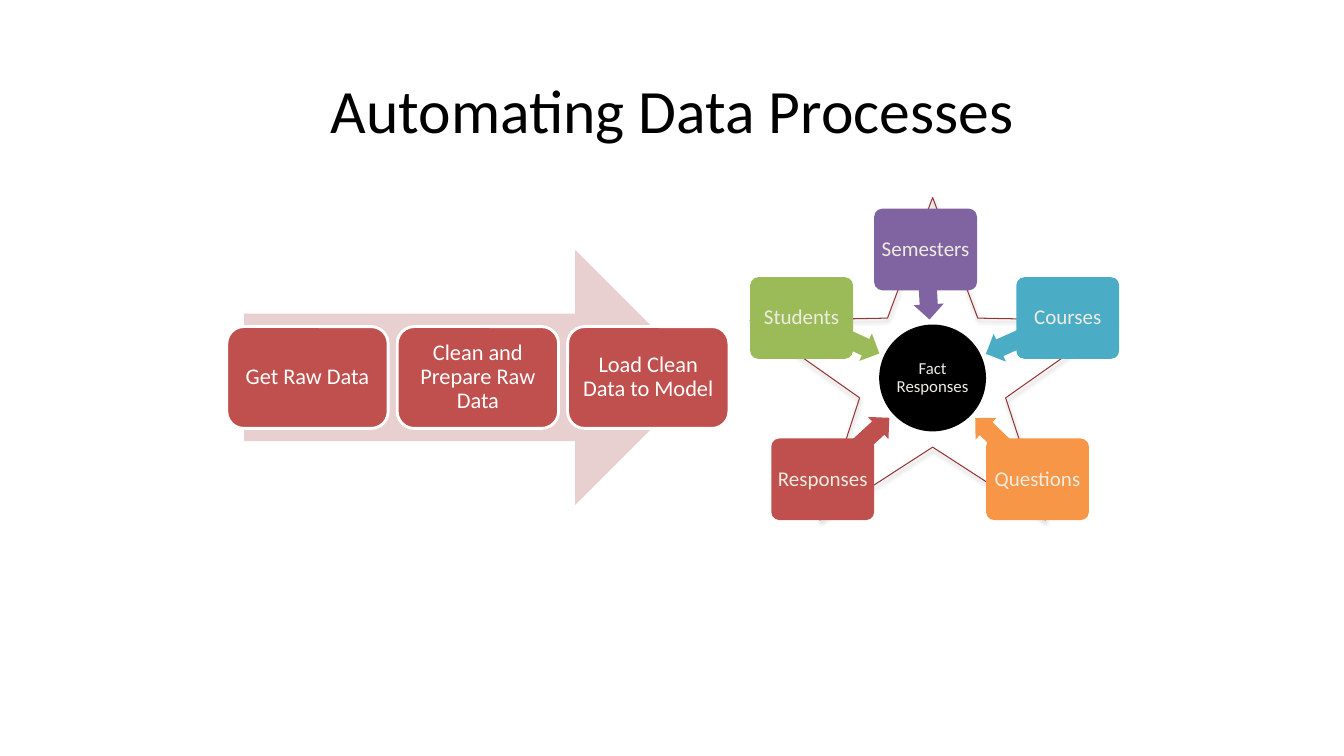
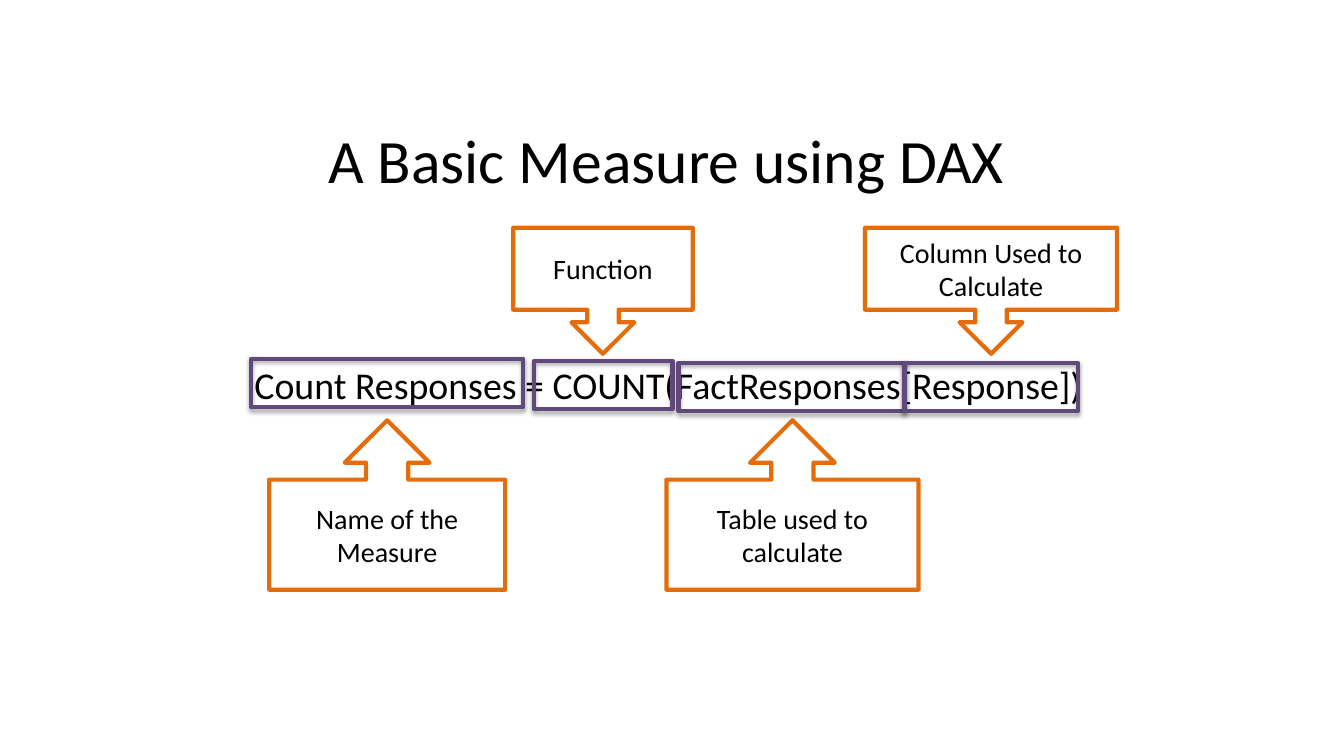
from math import atan2, cos, degrees, hypot, sin

from lxml.etree import SubElement
from pptx import Presentation
from pptx.dml.color import RGBColor
from pptx.enum.shapes import MSO_SHAPE
from pptx.enum.text import MSO_ANCHOR, PP_ALIGN
from pptx.oxml.ns import qn
from pptx.util import Emu, Pt

EMU_PER_PX = 9144
FONT = "Calibri"
COLORS = {
    "black": "000000",
    "white": "FFFFFF",
    "cream": "EEECE1",
    "red": "C0504D",
    "pink": "E8D0D0",
    "maroon": "953735",
    "green": "9BBB59",
    "purple": "8064A2",
    "teal": "4BACC6",
    "orange": "F79646",
    "callout": "E46C0A",
    "highlight": "604A7B",
}


def px(length):
    return Emu(round(length) * EMU_PER_PX)


def rgb(name):
    return RGBColor.from_string(COLORS[name])


def write(box, text, size=20, color="black", inset=(10, 5), spacing=None):
    frame = box.text_frame
    frame.word_wrap = True
    frame.vertical_anchor = MSO_ANCHOR.MIDDLE
    frame.margin_left = frame.margin_right = px(inset[0])
    frame.margin_top = frame.margin_bottom = px(inset[1])
    para = frame.paragraphs[0]
    para.alignment = PP_ALIGN.CENTER
    para.line_spacing = spacing
    span = para.add_run()
    span.text = text
    span.font.name = FONT
    span.font.size = Pt(size)
    span.font.color.rgb = rgb(color)


def cast_shadow(box):
    effects = box._element.spPr.find(qn("a:effectLst"))
    shadow = SubElement(effects, qn("a:outerShdw"), blurRad="40000",
                        dist="23000", dir="5400000", rotWithShape="0")
    color = SubElement(shadow, qn("a:srgbClr"), val=COLORS["black"])
    SubElement(color, qn("a:alpha"), val="35000")


class Deck:
    def __init__(self, width, height):
        self.file = Presentation()
        self.file.slide_width = px(width)
        self.file.slide_height = px(height)
        self.page = None

    def add_page(self):
        self.page = self.file.slides.add_slide(self.file.slide_layouts[6])

    def text(self, text, left, top, width, height, **style):
        box = self.page.shapes.add_textbox(px(left), px(top), px(width), px(height))
        write(box, text, **style)

    def title(self, text, left, top, width, height):
        self.text(text, left, top, width, height, size=44)

    def shape(self, kind, left, top, width, height, fill=None, line=None,
              weight=3, adjust=(), turn=0, shadow=False):
        box = self.page.shapes.add_shape(kind, px(left), px(top), px(width), px(height))
        box.shadow.inherit = False
        for index, value in enumerate(adjust):
            box.adjustments[index] = value
        box.rotation = turn
        if fill:
            box.fill.solid()
            box.fill.fore_color.rgb = rgb(fill)
        else:
            box.fill.background()
        if line:
            box.line.color.rgb = rgb(line)
            box.line.width = Pt(weight)
        else:
            box.line.fill.background()
        if shadow:
            cast_shadow(box)
        return box

    def step(self, text, left, top):
        box = self.shape(MSO_SHAPE.ROUNDED_RECTANGLE, left, top, 160, 101,
                         fill="red", line="white", weight=2)
        write(box, text, size=16, color="white", inset=(7, 7), spacing=0.9)

    def hub(self, text, center_x, center_y, radius):
        box = self.shape(MSO_SHAPE.OVAL, center_x - radius, center_y - radius,
                         2 * radius, 2 * radius, fill="black")
        write(box, text, size=12, color="cream", inset=(1, 1), spacing=0.9)

    def spoke(self, text, color, left, top, hub_x, hub_y, reach):
        width, height, thickness = 102, 81, 30
        start_x, start_y = left + width / 2, top + height / 2
        across, down = hub_x - start_x, hub_y - start_y
        angle = atan2(down, across)
        length = hypot(across, down) - reach
        middle_x = start_x + cos(angle) * length / 2
        middle_y = start_y + sin(angle) * length / 2
        self.shape(MSO_SHAPE.RIGHT_ARROW, middle_x - length / 2,
                   middle_y - thickness / 2, length, thickness,
                   fill=color, adjust=(0.6, 0.5), turn=degrees(angle))
        box = self.shape(MSO_SHAPE.ROUNDED_RECTANGLE, left, top, width, height,
                         fill=color, adjust=(0.1,))
        write(box, text, size=15, color="cream", inset=(3, 3), spacing=0.9)

    def callout(self, kind, text, left, top, width, height):
        box = self.shape(kind, left, top, width, height, line="callout")
        write(box, text)

    def highlight(self, left, top, width):
        self.shape(MSO_SHAPE.RECTANGLE, left, top, width, 48,
                   line="highlight", shadow=True)


def add_process_page(deck):
    deck.add_page()
    deck.shape(MSO_SHAPE.STAR_5_POINT, 744, 196, 362, 320, line="maroon",
               weight=0.75, adjust=(0.2,), shadow=True)
    deck.shape(MSO_SHAPE.RIGHT_ARROW, 242, 248, 455, 253, fill="pink")
    steps = ("Get Raw Data", "Clean and Prepare Raw Data", "Load Clean Data to Model")
    for index, text in enumerate(steps):
        deck.step(text, 225 + 169 * index, 324)

    hub_x, hub_y, radius, gap = 925, 375, 53, 5
    deck.hub("Fact Responses", hub_x, hub_y, radius)
    for text, color, left, top in (
        ("Responses", "red", 765, 435),
        ("Students", "green", 744, 275),
        ("Semesters", "purple", 867, 207),
        ("Courses", "teal", 1008, 275),
        ("Questions", "orange", 978, 435),
    ):
        deck.spoke(text, color, left, top, hub_x, hub_y, radius + gap)
    deck.title("Automating Data Processes", 67, 45, 1200, 125)


def add_measure_page(deck):
    deck.add_page()
    deck.text("Count Responses = COUNT(FactResponses[Response]) ",
              167, 337, 1000, 88, size=27, inset=(7, 4))
    up, down = MSO_SHAPE.UP_ARROW_CALLOUT, MSO_SHAPE.DOWN_ARROW_CALLOUT
    for kind, text, left, top, width, height in (
        (up, "Name of the Measure", 267, 417, 234, 168),
        (down, "Function", 509, 226, 178, 125),
        (up, "Table used to calculate", 661, 417, 250, 168),
        (down, "Column Used to Calculate", 858, 226, 250, 125),
    ):
        deck.callout(kind, text, left, top, width, height)
    for left, top, width in ((249, 356, 270), (530, 358, 137),
                             (673, 360, 225), (897, 360, 172)):
        deck.highlight(left, top, width)
    deck.title("A Basic Measure using DAX", 230, 103, 862, 109)


def main():
    deck = Deck(1333, 750)
    add_process_page(deck)
    add_measure_page(deck)
    deck.file.save("out.pptx")


if __name__ == "__main__":
    main()
